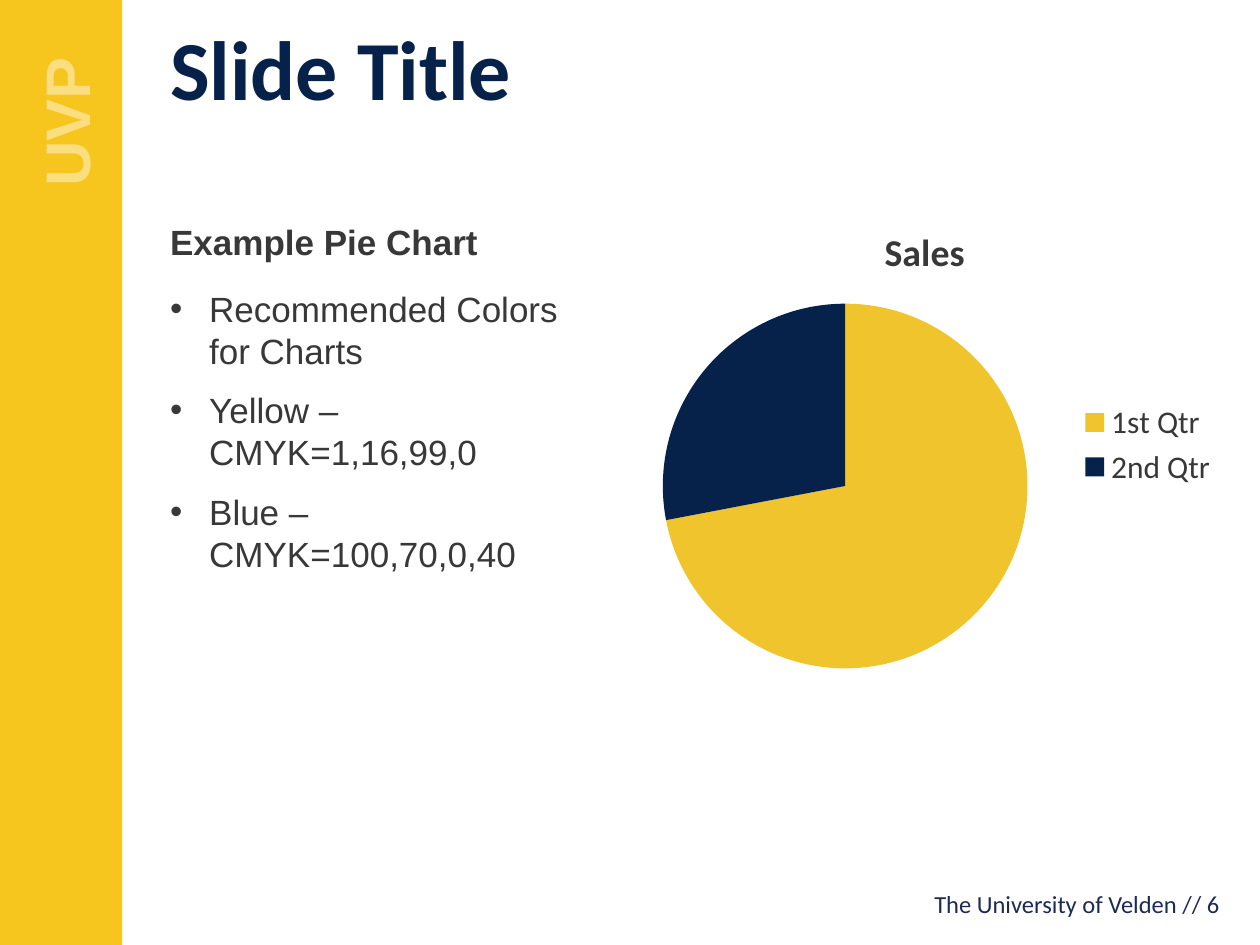
import pptx
import pptx.chart.data
import pptx.dml.color
import pptx.enum.chart
import pptx.enum.shapes
import pptx.enum.text
import pptx.oxml
import pptx.oxml.ns
import pptx.util
from pptx.util import Inches

ANCHOR = pptx.enum.text.MSO_ANCHOR
ALIGN = pptx.enum.text.PP_ALIGN
NAMESPACES = ('xmlns:a="http://schemas.openxmlformats.org/drawingml/2006/main" '
              'xmlns:c="http://schemas.openxmlformats.org/drawingml/2006/chart"')


def color(value):
    """Turn a hex string into a colour."""
    return pptx.dml.color.RGBColor.from_string(value)


def element(tag, content=""):
    """Parse one drawing or chart element."""
    name = tag.split()[0]
    return pptx.oxml.parse_xml(f"<{tag} {NAMESPACES}>{content}</{name}>")


class SlideBuilder:
    """Hold the style and the current slide."""

    navy, gold, gray, white = "07224A", "F6C51E", "383838", "FFFFFF"
    heading_font, body_font = "Calibri", "Arial"

    def __init__(self, slide):
        self.slide = slide

    def style(self, font, name, size, hex_color, bold=False):
        """Set every property of a font."""
        font.name, font.size, font.bold = name, pptx.util.Pt(size), bold
        font.color.rgb = color(hex_color)

    def set_text(self, shape, lines, font, anchor=ANCHOR.TOP, align=ALIGN.LEFT):
        """Fill a shape with paragraphs of one style."""
        frame = shape.text_frame
        frame.text = "\n".join(lines)
        frame.word_wrap = True
        frame.auto_size = pptx.enum.text.MSO_AUTO_SIZE.NONE
        frame.vertical_anchor = anchor
        for paragraph in frame.paragraphs:
            paragraph.alignment = align
            self.style(paragraph.font, *font)
        return frame

    def placeholder(self, index, box, lines, font, anchor=ANCHOR.TOP):
        """Move and fill a template placeholder."""
        shape = self.slide.placeholders[index]
        shape.left, shape.top, shape.width, shape.height = map(Inches, box)
        self.set_text(shape, lines, font, anchor)
        return shape

    def title(self, box, text):
        """Add the slide title."""
        shape = self.placeholder(0, box, [text], (self.heading_font, 48, self.navy, True),
                                 ANCHOR.MIDDLE)
        shape.line.color.rgb = color(self.white)
        shape.line.width = pptx.util.Pt(0.75)
        shape.text_frame.paragraphs[0].line_spacing = pptx.util.Pt(60)

    def heading(self, index, box, text):
        """Add a bold column heading."""
        self.placeholder(index, box, [text], (self.body_font, 20, self.gray, True))

    def bullets(self, index, box, items):
        """Add a bulleted list."""
        shape = self.placeholder(index, box, items, (self.body_font, 20, self.gray))
        for paragraph in shape.text_frame.paragraphs:
            paragraph.line_spacing = pptx.util.Pt(24)
            paragraph.space_before = pptx.util.Pt(10)
            properties = paragraph._p.get_or_add_pPr()
            properties.set("marL", str(Inches(0.31)))
            properties.set("indent", str(-Inches(0.31)))
            properties.insert_element_before(element('a:buChar char="•"'),
                                             "a:tabLst", "a:defRPr", "a:extLst")

    def band(self, box):
        """Draw a plain coloured band."""
        shape = self.slide.shapes.add_shape(
            pptx.enum.shapes.MSO_SHAPE.RECTANGLE, *map(Inches, box))
        shape.shadow.inherit = False
        shape.fill.solid()
        shape.fill.fore_color.rgb = color(self.gold)
        shape.line.fill.background()

    def label(self, box, text, font, align, upward=False):
        """Add a text box, reading upward if asked."""
        shape = self.slide.shapes.add_textbox(*map(Inches, box))
        frame = self.set_text(shape, [text], font, ANCHOR.MIDDLE, align)
        if upward:
            frame._txBody.bodyPr.set("vert", "vert270")

    def pie(self, box, name, slices, layout):
        """Draw a pie chart from (category, value, colour) slices."""
        data = pptx.chart.data.CategoryChartData()
        data.categories = [category for category, _, _ in slices]
        data.add_series(name, [value for _, value, _ in slices])
        chart = self.slide.shapes.add_chart(
            pptx.enum.chart.XL_CHART_TYPE.PIE, *map(Inches, box), data).chart
        self.style(chart.font, self.heading_font, 18, self.gray)
        chart.has_title = True
        heading = chart.chart_title.text_frame
        heading.text = name
        self.style(heading.paragraphs[0].font, self.heading_font, 21.6, self.gray, True)
        chart.has_legend = True
        chart.legend.position = pptx.enum.chart.XL_LEGEND_POSITION.RIGHT
        chart.legend.include_in_layout = False
        plot = chart.plots[0]
        plot.vary_by_categories = True
        for index, (_, _, hex_color) in enumerate(slices):
            fill = plot.series[0].points[index].format.fill
            fill.solid()
            fill.fore_color.rgb = color(hex_color)
        settings = '<c:layoutTarget val="inner"/><c:xMode val="edge"/><c:yMode val="edge"/>'
        settings += "".join(f'<c:{key} val="{value}"/>' for key, value in zip("xywh", layout))
        area = chart._chartSpace.chart.plotArea
        for automatic in area.findall(pptx.oxml.ns.qn("c:layout")):
            area.remove(automatic)
        area.insert(0, element("c:layout", f"<c:manualLayout>{settings}</c:manualLayout>"))

    def remove_empty(self):
        """Remove the placeholders left without text."""
        for shape in list(self.slide.placeholders):
            if not shape.text_frame.text:
                shape._element.getparent().remove(shape._element)


def main():
    """Build the slide and save it."""
    deck = pptx.Presentation()
    deck.slide_width, deck.slide_height = Inches(10), Inches(7.5)
    page = SlideBuilder(deck.slides.add_slide(deck.slide_layouts[4]))
    page.band((0, 0, 0.97, 7.5))
    page.label((0.19, 0.22, 0.65, 1.5), "UVP", (page.body_font, 36, "FBDE7F", True),
               ALIGN.CENTER, upward=True)
    page.title((1.25, 0.03, 8.52, 0.97), "Slide Title")
    page.heading(1, (1.25, 1.7, 3.66, 0.35), "Example Pie Chart")
    page.bullets(2, (1.25, 2.23, 3.65, 1.59), [
        "Recommended Colors for Charts",
        "Yellow – CMYK=1,16,99,0",
        "Blue – CMYK=100,70,0,40",
    ])
    page.remove_empty()
    page.pie((4.91, 1.6, 4.86, 3.86), "Sales",
             [("1st Qtr", 72, "EFC42C"), ("2nd Qtr", 28, page.navy)],
             layout=(0.07, 0.21, 0.6, 0.75))
    page.label((4.91, 6.97, 4.87, 0.4), "The University of Velden // 6",
               (page.heading_font, 14, "1C2A55"), ALIGN.RIGHT)
    deck.save("out.pptx")


if __name__ == "__main__":
    main()
